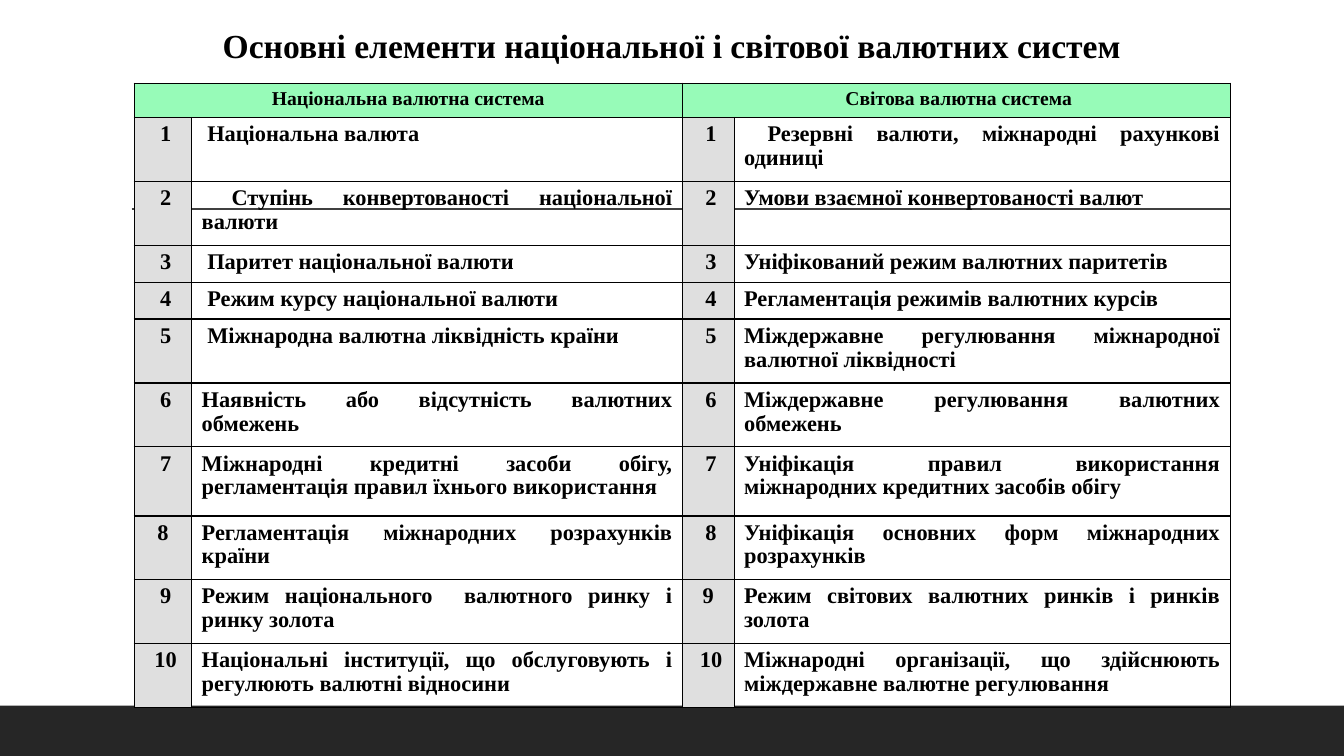
from lxml.etree import SubElement
from pptx import Presentation
from pptx.dml.color import RGBColor
from pptx.enum.shapes import MSO_CONNECTOR, MSO_SHAPE
from pptx.enum.text import MSO_ANCHOR, PP_ALIGN
from pptx.oxml.ns import qn
from pptx.util import Cm, Pt

TITLE = "Основні елементи національної і світової валютних систем"
HEADERS = ["Національна валютна система", " Світова валютна система"]
SHORT, TALL, TALLEST = 0.93, 1.61, 1.74
# Row height in cm, then number and text for each of the two systems
ROWS = [
    (TALL, " 1", " Національна валюта",
     " 1", " Резервні валюти, міжнародні рахункові одиниці"),
    (TALL, " 2", " Ступінь конвертованості національної валюти",
     " 2", "Умови взаємної конвертованості валют"),
    (SHORT, " 3", " Паритет національної валюти",
     " 3", "Уніфікований режим валютних паритетів"),
    (SHORT, " 4", " Режим курсу національної валюти",
     " 4", "Регламентація режимів валютних курсів"),
    (TALL, " 5", " Міжнародна валютна ліквідність країни",
     " 5", "Міждержавне регулювання міжнародної валютної ліквідності"),
    (TALL, " 6", "Наявність або відсутність валютних обмежень",
     " 6", "Міждержавне регулювання валютних обмежень"),
    (TALLEST, " 7", "Міжнародні кредитні засоби обігу, регламентація правил їхнього використання",
     " 7", "Уніфікація правил використання міжнародних кредитних засобів обігу"),
    (TALL, "8", "Регламентація міжнародних розрахунків країни",
     " 8", "Уніфікація основних форм міжнародних розрахунків"),
    (TALL, " 9", "Режим національного  валютного ринку і ринку золота",
     "9", "Режим світових валютних ринків і ринків золота"),
    (TALL, " 10", "Національні інституції, що обслуговують і регулюють валютні відносини",
     " 10", "Міжнародні організації, що здійснюють міждержавне валютне регулювання"),
]
COLUMN_WIDTHS = [1.45, 12.37, 1.3, 12.5]
HEADER_HEIGHT = 0.86
FONT = "Times New Roman"
COLORS = {"text": "000000", "border": "000000", "header": "97FBB8",
          "number": "DFDFDF", "footer": "262626", "rule": "404040"}


def color(name):
    return RGBColor.from_string(COLORS[name])


def write(frame, text, size, alignment):
    para = frame.paragraphs[0]
    para.alignment = alignment
    span = para.add_run()
    span.text = text
    span.font.name = FONT
    span.font.size = Pt(size)
    span.font.bold = True
    span.font.color.rgb = color("text")
    return para


def add_borders(cell):
    """Put a 1 pt line on all four sides; call before the cell gets its fill."""
    properties = cell._tc.get_or_add_tcPr()
    for side in ("a:lnL", "a:lnR", "a:lnT", "a:lnB"):
        line = SubElement(properties, qn(side), w=str(Pt(1)))
        fill = SubElement(line, qn("a:solidFill"))
        SubElement(fill, qn("a:srgbClr"), val=COLORS["border"])


def paint(cell, name=None):
    add_borders(cell)
    if name:
        cell.fill.solid()
        cell.fill.fore_color.rgb = color(name)
    else:
        cell.fill.background()


def add_backdrop(page):
    footer = page.shapes.add_shape(MSO_SHAPE.RECTANGLE, 0, Cm(17.78), deck.slide_width, Cm(1.27))
    footer.shadow.inherit = False
    footer.fill.solid()
    footer.fill.fore_color.rgb = color("footer")
    footer.line.fill.background()
    rule = page.shapes.add_connector(MSO_CONNECTOR.STRAIGHT, Cm(3.32), Cm(5.27), Cm(31.01), Cm(5.27))
    rule.line.color.rgb = color("rule")
    rule.line.width = Pt(1)
    SubElement(rule._element.spPr, qn("a:effectLst"))


def add_title(page):
    box = page.shapes.add_textbox(Cm(4.23), Cm(0.5), Cm(25.4), Cm(1.27))
    box.text_frame.word_wrap = True
    box.text_frame.vertical_anchor = MSO_ANCHOR.MIDDLE
    write(box.text_frame, TITLE, 24, PP_ALIGN.CENTER)


def add_systems_table(page):
    heights = [HEADER_HEIGHT] + [row[0] for row in ROWS]
    table = page.shapes.add_table(len(heights), len(COLUMN_WIDTHS), Cm(3.38), Cm(2.1),
                                  Cm(sum(COLUMN_WIDTHS)), Cm(sum(heights))).table
    table.first_row = table.horz_banding = False
    for column, width in zip(table.columns, COLUMN_WIDTHS):
        column.width = Cm(width)
    for row, height in zip(table.rows, heights):
        row.height = Cm(height)

    for index in range(len(COLUMN_WIDTHS)):
        paint(table.cell(0, index), "header")
    for index, header in enumerate(HEADERS):
        cell = table.cell(0, 2 * index)
        cell.merge(table.cell(0, 2 * index + 1))
        write(cell.text_frame, header, 14, PP_ALIGN.CENTER)

    for row_index, (_, *texts) in enumerate(ROWS, start=1):
        for column_index, text in enumerate(texts):
            is_number = column_index % 2 == 0
            cell = table.cell(row_index, column_index)
            paint(cell, "number" if is_number else None)
            alignment = PP_ALIGN.CENTER if is_number else PP_ALIGN.JUSTIFY
            write(cell.text_frame, text, 16, alignment).line_spacing = 0.96


deck = Presentation()
deck.slide_width, deck.slide_height = Cm(33.87), Cm(19.05)
slide = deck.slides.add_slide(deck.slide_layouts[6])
add_backdrop(slide)
add_title(slide)
add_systems_table(slide)
deck.save("out.pptx")
